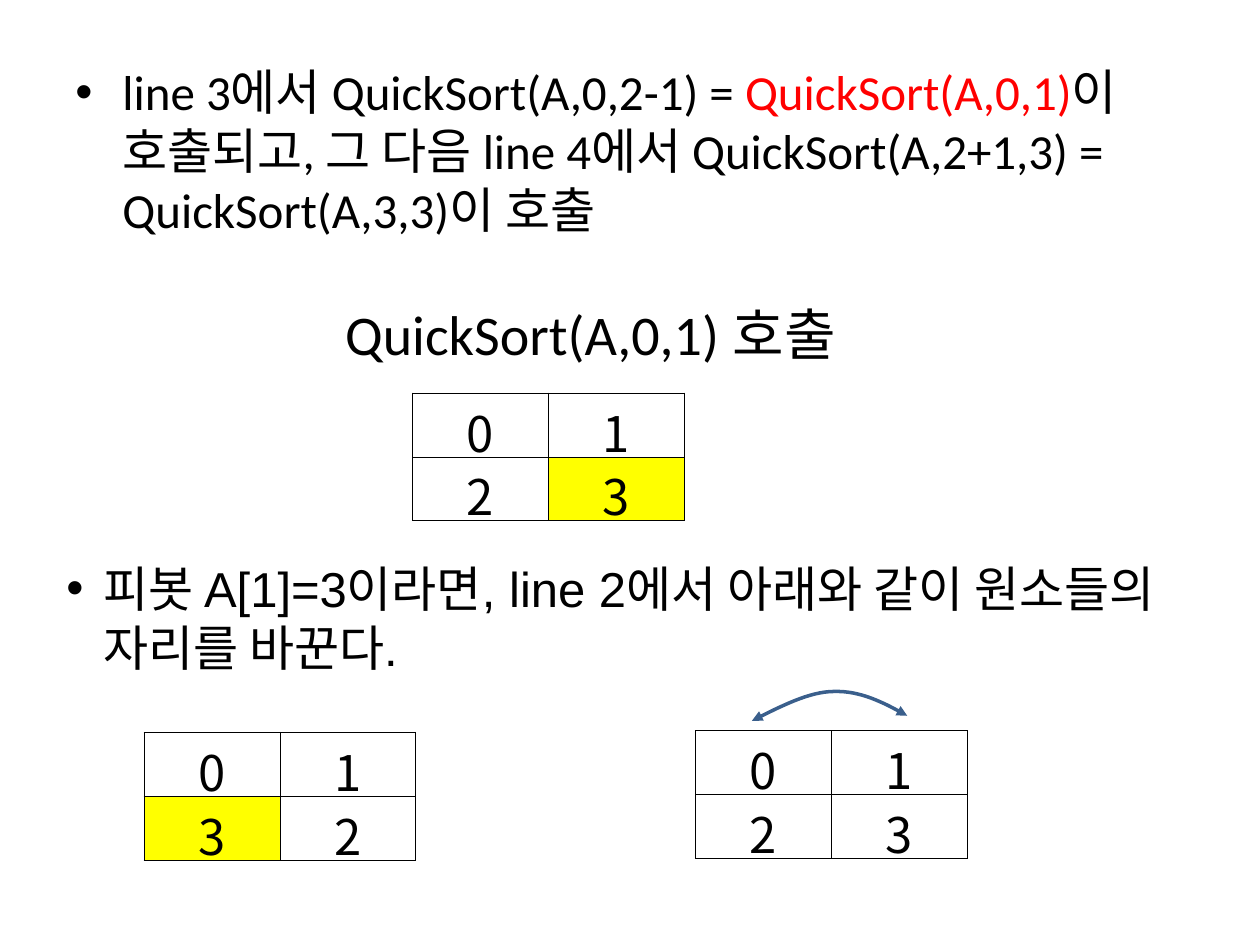
"""Build the slide that explains the QuickSort(A,0,1) call."""
from dataclasses import dataclass

from lxml import etree
from pptx import Presentation
from pptx.dml.color import RGBColor
from pptx.enum.text import MSO_ANCHOR, PP_ALIGN
from pptx.oxml.ns import qn
from pptx.util import Cm, Pt

CENTER = PP_ALIGN.CENTER
MIDDLE = MSO_ANCHOR.MIDDLE
BLANK_LAYOUT = 6


@dataclass(frozen=True)
class Theme:
    black: RGBColor = RGBColor(0x00, 0x00, 0x00)
    red: RGBColor = RGBColor(0xFF, 0x00, 0x00)
    yellow: RGBColor = RGBColor(0xFF, 0xFF, 0x00)
    arrow: RGBColor = RGBColor(0x3A, 0x5F, 0x8C)
    body_size: Pt = Pt(28)
    heading_size: Pt = Pt(32)
    border_width: Pt = Pt(0.28)
    arrow_width: Pt = Pt(2)
    latin: str = "Calibri"
    sans: str = "Arial"
    digits: str = "Noto Sans CJK KR"


THEME = Theme()


def apply(target, formats):
    for name, value in formats.items():
        setattr(target, name, value)


def add_span(para, text, font, size, color=THEME.black):
    span = para.add_run()
    span.text = text
    apply(span.font, {"name": font, "size": size})
    span.font.color.rgb = color


def add_bullet(para, indent):
    properties = para._p.get_or_add_pPr()
    properties.set("marL", str(indent))
    properties.set("indent", str(-indent))
    etree.SubElement(properties, qn("a:buFont"), typeface="Arial")
    etree.SubElement(properties, qn("a:buChar"), char="•")


def add_text(page, place, spans, font, size, indent=None, before=0, wrap=True):
    box = page.shapes.add_textbox(*map(Cm, place))
    box.text_frame.word_wrap = wrap
    para = box.text_frame.paragraphs[0]
    para.space_before = Pt(before)
    if indent:
        add_bullet(para, Cm(indent))
    for text, color in spans:
        add_span(para, text, font, size, color)


def add_borders(cell):
    properties = cell._tc.get_or_add_tcPr()
    for index, side in enumerate(("a:lnL", "a:lnR", "a:lnT", "a:lnB")):
        line = etree.Element(qn(side), w=str(THEME.border_width))
        fill = etree.SubElement(line, qn("a:solidFill"))
        etree.SubElement(fill, qn("a:srgbClr"), val=str(THEME.black))
        properties.insert(index, line)


def fill_cell(cell, text, color):
    apply(cell, {
        "vertical_anchor": MIDDLE,
        "margin_left": Cm(0.18), "margin_right": Cm(0.18),
        "margin_top": Cm(0.05), "margin_bottom": Cm(0.05),
    })
    para = cell.text_frame.paragraphs[0]
    para.alignment = CENTER
    add_span(para, text, THEME.digits, THEME.body_size)
    if color is None:
        cell.fill.background()
    else:
        cell.fill.solid()
        cell.fill.fore_color.rgb = color
    add_borders(cell)


def add_array(page, left, top, values, pivot=None):
    rows = (range(len(values)), values)
    frame = page.shapes.add_table(
        len(rows), len(values), Cm(left), Cm(top), Cm(5.48), Cm(2.57))
    table = frame.table
    apply(table, {"first_row": False, "horz_banding": False})
    for row in table.rows:
        row.height = Cm(1.2)
    for row, numbers in enumerate(rows):
        for column, number in enumerate(numbers):
            marked = row == 1 and column == pivot
            fill_cell(table.cell(row, column), str(number),
                      THEME.yellow if marked else None)


def bezier(points, t):
    weights = ((1 - t) ** 3, 3 * t * (1 - t) ** 2, 3 * t * t * (1 - t), t ** 3)
    return tuple(Cm(sum(w * point[axis] for w, point in zip(weights, points)))
                 for axis in (0, 1))


def add_swap_arrow(page, curves, steps=16):
    points = [bezier(curve, step / steps)
              for curve in curves for step in range(steps + 1)]
    builder = page.shapes.build_freeform(*points[0])
    builder.add_line_segments(points[1:], close=False)
    arrow = builder.convert_to_shape()
    arrow.shadow.inherit = False
    arrow.fill.background()
    arrow.line.color.rgb = THEME.arrow
    arrow.line.width = THEME.arrow_width
    line = arrow.line._get_or_add_ln()
    for end in ("a:headEnd", "a:tailEnd"):
        etree.SubElement(line, qn(end), type="triangle")


def main():
    deck = Presentation()
    apply(deck, {"slide_width": Cm(25.4), "slide_height": Cm(19.05)})
    page = deck.slides.add_slide(deck.slide_layouts[BLANK_LAYOUT])
    add_text(page, (1.27, 1.12, 22.86, 4.6), [
        ("line 3에서 QuickSort(A,0,2-1) = ", THEME.black),
        ("QuickSort(A,0,1)", THEME.red),
        ("이 호출되고, 그 다음 line 4에서 QuickSort(A,2+1,3) = "
         "QuickSort(A,3,3)이 호출", THEME.black),
    ], THEME.latin, THEME.body_size, indent=0.95, before=5.6)
    add_text(page, (6.71, 5.92, 10.67, 1.63),
             [("QuickSort(A,0,1) 호출", THEME.black)],
             THEME.latin, THEME.heading_size, wrap=False)
    add_array(page, 8.31, 7.92, (2, 3), pivot=1)
    add_text(page, (1.09, 11.13, 22.81, 2.64), [
        ("피봇 A[1]=3이라면, line 2에서 아래와 같이 원소들의 자리를 바꾼다.",
         THEME.black),
    ], THEME.sans, THEME.body_size, indent=0.74)
    add_array(page, 2.9, 14.76, (3, 2), pivot=0)
    add_array(page, 14.02, 14.73, (2, 3))
    add_swap_arrow(page, [
        ((15.16, 14.53), (15.72, 14.25), (16.31, 13.94), (16.81, 13.94)),
        ((16.81, 13.94), (17.35, 13.92), (17.83, 14.17), (18.29, 14.43)),
    ])
    deck.save("out.pptx")


if __name__ == "__main__":
    main()
